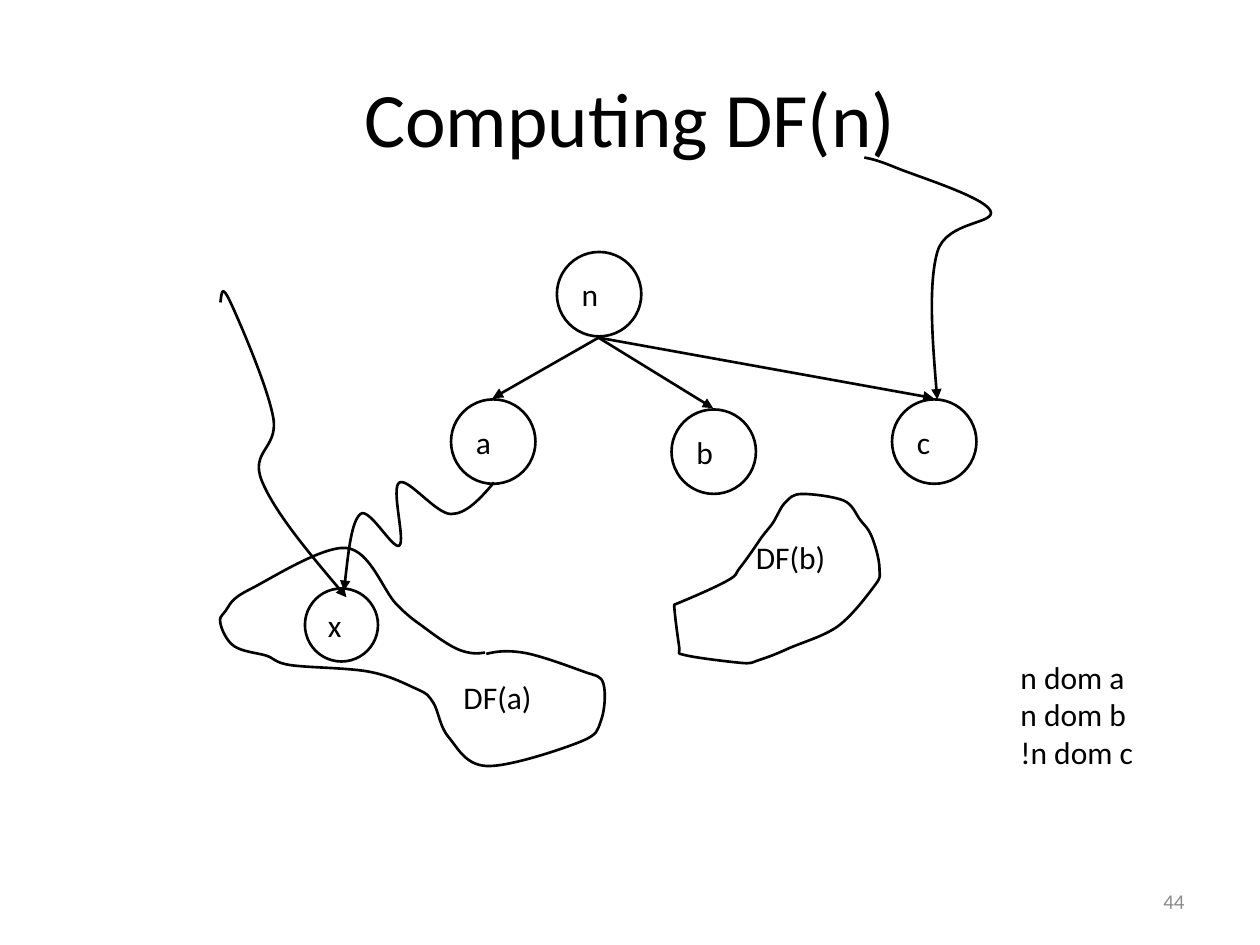
from itertools import chain
from lxml.etree import SubElement
from pptx import Presentation
from pptx.dml.color import RGBColor
from pptx.enum.shapes import MSO_CONNECTOR as Connector, MSO_SHAPE as Shape
from pptx.enum.text import MSO_ANCHOR as Anchor, MSO_AUTO_SIZE as AutoSize, PP_ALIGN as Align
from pptx.oxml.ns import qn
from pptx.util import Pt

PX = 9144
BLACK = RGBColor(0x00, 0x00, 0x00)
GRAY = RGBColor(0x8C, 0x8C, 0x8C)
FONT = "Calibri"
NODE = 67
SMALL_NODE = 58
CHILD_STEP = 175
CHILD_DROPS = {"a": 117, "b": 125, "c": 117}

ENTRY_TO_C = [(0, 0), (25, 8), (100, 42), (58, 75), (58, 192)]
ENTRY_TO_X = [(0, 15), (8, 15), (42, 107), (33, 157), (100, 249)]
A_TO_X = [(119, 4), (85, 29), (44, 4), (44, 54), (13, 29), (0, 90)]

A_TOP = [(210, 83), (190, 81), (163, 64), (140, 45), (100, 0)]
A_LEFT = [(23, 33), (4, 50), (0, 60), (11, 78), (35, 85)]
A_BOTTOM = [(56, 93), (117, 98), (156, 112), (169, 123), (181, 150), (211, 173)]
A_RIGHT = [(285, 154), (302, 137), (304, 108), (288, 98), (240, 83), (211, 84)]
FRONTIER_A = A_TOP + A_LEFT + A_BOTTOM + A_RIGHT

B_CORNER = [(2, 88)]
B_TOP = [(44, 69), (54, 59), (69, 38), (79, 25), (90, 7), (104, 0), (136, 5)]
B_RIGHT = [(150, 21), (158, 32), (165, 59), (161, 73), (132, 105)]
B_BOTTOM = [(92, 123), (69, 132), (54, 134), (11, 128), (6, 121)]
FRONTIER_B = B_CORNER + B_TOP + B_RIGHT + B_BOTTOM + B_CORNER


def emu(*lengths):
    """Turn px lengths into EMU."""
    return [length * PX for length in lengths]


def write(frame, text, size=18, color=BLACK, align=Align.LEFT, anchor=Anchor.MIDDLE, wrap=False):
    """Fill a text frame with one paragraph per line of text."""
    frame.text = text
    frame.word_wrap = wrap
    frame.vertical_anchor = anchor
    for paragraph in frame.paragraphs:
        paragraph.alignment = align
        paragraph.font.name = FONT
        paragraph.font.size = Pt(size)
        paragraph.font.color.rgb = color


def style_line(shape, arrow=False):
    """Give a shape the black stroke, with an arrowhead at its end if asked."""
    shape.line.color.rgb = BLACK
    shape.line.width = Pt(1.5)
    if arrow:
        line = shape._element.spPr.find(qn("a:ln"))
        SubElement(line, qn("a:tailEnd"), type="triangle")


def style_outline(shape, arrow=False):
    """Leave a shape unfilled and without shadow, with only its stroke."""
    shape.shadow.inherit = False
    shape.fill.background()
    style_line(shape, arrow)


def add_label(slide, box, text):
    """Add a text box that grows with its text."""
    label = slide.shapes.add_textbox(*emu(*box))
    write(label.text_frame, text, anchor=Anchor.TOP)
    label.text_frame.auto_size = AutoSize.SHAPE_TO_FIT_TEXT


def add_node(slide, left, top, text, size=NODE):
    """Add a round graph node."""
    node = slide.shapes.add_shape(Shape.OVAL, *emu(left, top, size, size))
    style_outline(node)
    write(node.text_frame, text)


def add_edge(slide, start, end):
    """Add a straight arrow between two points."""
    edge = slide.shapes.add_connector(Connector.STRAIGHT, *emu(*start, *end))
    style_line(edge, arrow=True)
    SubElement(edge._element.spPr, qn("a:effectLst"))


def midpoint(first, second):
    """Return the point halfway between two points."""
    return (first[0] + second[0]) / 2, (first[1] + second[1]) / 2


def smooth(anchors):
    """Return (handle, handle, anchor) triples of a Catmull-Rom curve through the anchors."""
    arriving, leaving = [], []
    for before, here, after in zip(anchors, anchors[1:], anchors[2:]):
        dx, dy = (after[0] - before[0]) / 6, (after[1] - before[1]) / 6
        arriving.append((here[0] - dx, here[1] - dy))
        leaving.append((here[0] + dx, here[1] + dy))
    first_handle = midpoint(anchors[0], arriving[0])
    last_handle = midpoint(leaving[-1], anchors[-1])
    return zip([first_handle] + leaving, arriving + [last_handle], anchors[1:])


def add_curve(slide, left, top, anchors, close=False, arrow=False):
    """Add a smooth curve through anchors, each line triple becoming one Bézier segment."""
    placed = [(left + x, top + y) for x, y in anchors]
    builder = slide.shapes.build_freeform(*placed[0], scale=PX)
    builder.add_line_segments(chain.from_iterable(smooth(placed)), close=close)
    curve = builder.convert_to_shape()
    segments = curve._element.xpath(".//a:lnTo")
    for triple in zip(segments[::3], segments[1::3], segments[2::3]):
        bezier = triple[0].makeelement(qn("a:cubicBezTo"))
        triple[0].addprevious(bezier)
        for segment in triple:
            bezier.append(segment[0])
            segment.getparent().remove(segment)
    style_outline(curve, arrow)


def add_title(slide, box):
    """Place the title in its placeholder."""
    title = slide.shapes.title
    title.left, title.top, title.width, title.height = emu(*box)
    write(title.text_frame, "Computing DF(n)", size=44, align=Align.CENTER, wrap=True)


def add_tree(slide, left, top):
    """Draw n with its three children and the outside path into c."""
    root_left = left + 84
    root_foot = (root_left + NODE // 2, top + NODE + 1)
    add_node(slide, root_left, top, "n")
    for column, (name, drop) in enumerate(CHILD_DROPS.items()):
        child_left, child_top = left + column * CHILD_STEP, top + drop
        add_node(slide, child_left, child_top, name)
        add_edge(slide, root_foot, (child_left + NODE // 2, child_top - 1))
    add_curve(slide, left + 328, top - 75, ENTRY_TO_C, arrow=True)


def add_frontier_a(slide, left, top):
    """Draw the frontier of a, with x and the paths that reach it."""
    add_curve(slide, left, top, FRONTIER_A)
    add_label(slide, (left + 183, top + 98, 75, 40), "DF(a)")
    add_node(slide, left + 67, top + 32, "x", size=SMALL_NODE)
    add_curve(slide, left, top - 210, ENTRY_TO_X, arrow=True)
    add_curve(slide, left + 98, top - 56, A_TO_X, arrow=True)


def add_frontier_b(slide, left, top):
    """Draw the frontier of b."""
    add_curve(slide, left, top, FRONTIER_B, close=True)
    add_label(slide, (left + 57, top + 30, 76, 40), "DF(b)")


def add_page_number(slide, box):
    """Write the page number."""
    number = slide.shapes.add_textbox(*emu(*box))
    write(number.text_frame, "44", size=12, color=GRAY, align=Align.RIGHT, wrap=True)


def main():
    """Build and save the slide."""
    presentation = Presentation()
    presentation.slide_width, presentation.slide_height = emu(1000, 750)
    slide = presentation.slides.add_slide(presentation.slide_layouts[5])
    add_page_number(slide, (717, 695, 233, 40))
    add_title(slide, (50, 30, 900, 125))
    add_tree(slide, 358, 200)
    add_frontier_a(slide, 175, 435)
    add_frontier_b(slide, 533, 392)
    add_label(slide, (800, 517, 111, 101), "n dom a\nn dom b\n!n dom c")
    presentation.save("out.pptx")


if __name__ == "__main__":
    main()
